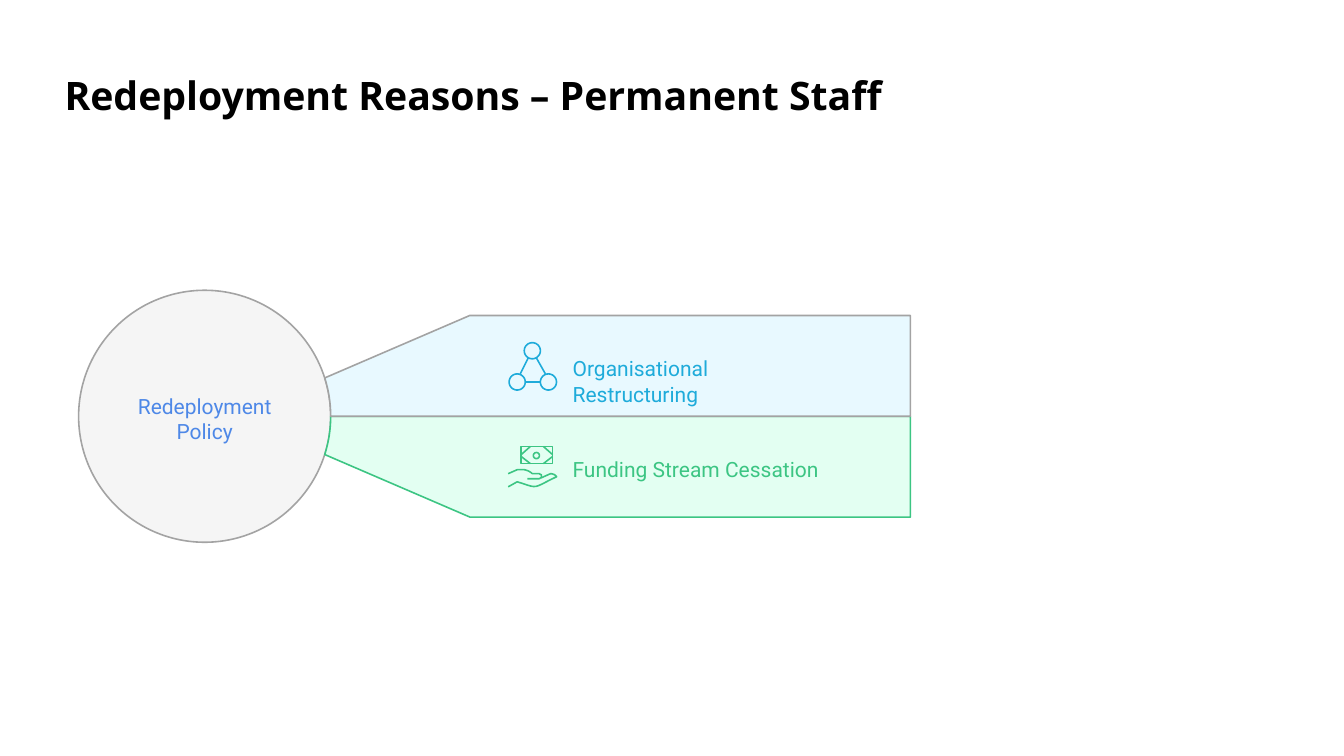
from math import asin, cos, pi, sin

from pptx import Presentation
from pptx.dml.color import RGBColor
from pptx.enum.shapes import MSO_SHAPE
from pptx.enum.text import MSO_ANCHOR, MSO_AUTO_SIZE, PP_ALIGN
from pptx.util import Inches, Pt

BLACK = RGBColor(0x00, 0x00, 0x00)
GRAY = RGBColor(0xA3, 0xA3, 0xA3)
PALE_GRAY = RGBColor(0xF5, 0xF5, 0xF5)
BLUE = RGBColor(0x4E, 0x88, 0xE7)
CYAN = RGBColor(0x1E, 0xAB, 0xDA)
PALE_CYAN = RGBColor(0xE8, 0xF9, 0xFF)
GREEN = RGBColor(0x3C, 0xC5, 0x83)
PALE_GREEN = RGBColor(0xE3, 0xFF, 0xF2)

LINE_WIDTH = Pt(1.12)
HUB_X, HUB_Y, HUB_RADIUS = 2.03, 4.13, 1.25
BAND_BEND, BAND_RIGHT, BAND_HEIGHT = 4.66, 9.03, 1.0
NECK_HEIGHT = 0.38  # height of a band where it meets the hub
LABEL_LEFT = 5.68


def write_text(frame, text, *, size, font, color, bold=False,
               align=PP_ALIGN.LEFT, spacing=None):
    paragraph = frame.paragraphs[0]
    paragraph.text = text
    paragraph.alignment = align
    if spacing:
        paragraph.line_spacing = spacing
    for run in paragraph.runs:
        run.font.size = Pt(size)
        run.font.name = font
        run.font.bold = bold
        run.font.color.rgb = color


def add_label(slide, text, left, top, width, height, color, **text_format):
    frame = slide.shapes.add_textbox(
        Inches(left), Inches(top), Inches(width), Inches(height)).text_frame
    frame.margin_left = frame.margin_right = 0
    frame.margin_top = frame.margin_bottom = 0
    frame.word_wrap = False
    frame.auto_size = MSO_AUTO_SIZE.SHAPE_TO_FIT_TEXT
    write_text(frame, text, size=15, font="Roboto", color=color, **text_format)


def paint(shape, line, fill=None):
    shape.shadow.inherit = False
    shape.line.color.rgb = line
    shape.line.width = LINE_WIDTH
    if fill is None:
        shape.fill.background()
    else:
        shape.fill.solid()
        shape.fill.fore_color.rgb = fill


def add_outline(slide, contours, line, fill=None):
    """Draw one freeform; a contour that returns to its start is closed."""
    builder = None
    for contour in contours:
        start, *rest = [(Inches(x), Inches(y)) for x, y in contour]
        if builder is None:
            builder = slide.shapes.build_freeform(*start)
        else:
            builder.move_to(*start)
        builder.add_line_segments(rest, close=contour[0] == contour[-1])
    paint(builder.convert_to_shape(), line, fill)


def arc(x, y, radius, sweep, steps):
    """Return points along an arc that starts at the right of its centre."""
    angles = [sweep * step / steps for step in range(steps + 1)]
    return [(x + radius * cos(angle), y + radius * sin(angle)) for angle in angles]


def ring(x, y, radius):
    points = arc(x, y, radius, 2 * pi, 36)
    return points[:-1] + points[:1]


def bezier(p0, p1, p2, p3, steps=10):
    """Return points along a cubic curve."""
    points = []
    for step in range(steps + 1):
        t = step / steps
        weights = ((1 - t) ** 3, 3 * t * (1 - t) ** 2, 3 * t * t * (1 - t), t ** 3)
        points.append(tuple(
            sum(w * p[axis] for w, p in zip(weights, (p0, p1, p2, p3)))
            for axis in (0, 1)))
    return points


def add_band(slide, direction, line, fill):
    """Direction is -1 for the band above the centre line and 1 below it."""
    sweep = direction * asin(NECK_HEIGHT / HUB_RADIUS)
    far_y = HUB_Y + direction * BAND_HEIGHT
    corner = (BAND_RIGHT, HUB_Y)
    band = [corner, *arc(HUB_X, HUB_Y, HUB_RADIUS, sweep, 8),
            (BAND_BEND, far_y), (BAND_RIGHT, far_y), corner]
    add_outline(slide, [band], line, fill)


def add_network_icon(slide, color):
    nodes = [ring(x, y, 0.08)
             for x, y in ((5.13, 3.79), (5.44, 3.79), (5.28, 3.48))]
    links = [[(5.21, 3.79), (5.36, 3.79)],
             [(5.32, 3.55), (5.41, 3.71)],
             [(5.24, 3.55), (5.16, 3.71)]]
    add_outline(slide, nodes + links, color)


def add_funding_icon(slide, color):
    # Open hand
    palm = [(5.37, 4.74),
            *bezier((5.46, 4.7), (5.48, 4.7), (5.51, 4.71), (5.52, 4.73)),
            *bezier((5.52, 4.73), (5.27, 4.85), (5.35, 4.85), (5.13, 4.78)),
            (5.04, 4.83)]
    fingers = [(5.23, 4.75),
               *bezier((5.35, 4.75), (5.35, 4.75), (5.36, 4.74), (5.37, 4.74)),
               *bezier((5.37, 4.74), (5.37, 4.73), (5.37, 4.72), (5.37, 4.71)),
               *bezier((5.37, 4.71), (5.36, 4.71), (5.35, 4.7), (5.35, 4.7)),
               *bezier((5.28, 4.7), (5.26, 4.68), (5.22, 4.66), (5.19, 4.66)),
               (5.13, 4.66), (5.04, 4.7)]

    # Banknote with cut corners and a coin
    left, top, right, bottom = 5.17, 4.43, 5.48, 4.6
    note = [(left, top), (right, top), (right, bottom), (left, bottom), (left, top)]
    cuts = [[(inner_x, y), (x, inner_y)]
            for x, inner_x in ((left, left + 0.09), (right, right - 0.09))
            for y, inner_y in ((top, top + 0.08), (bottom, bottom - 0.07))]
    coin = ring(5.32, 4.52, 0.03)
    add_outline(slide, [palm, fingers, note, *cuts, coin], color)


def main():
    presentation = Presentation()
    presentation.slide_width = Inches(13.33)
    presentation.slide_height = Inches(7.5)
    slide = presentation.slides.add_slide(presentation.slide_layouts[5])

    # Title
    title = slide.shapes.title
    title.left, title.top = Inches(0.54), Inches(0.24)
    title.width, title.height = Inches(11.5), Inches(1.45)
    title.text_frame.vertical_anchor = MSO_ANCHOR.MIDDLE
    title.text_frame.word_wrap = True
    write_text(title.text_frame, "Redeployment Reasons – Permanent Staff",
               size=28, font="Open Sans", color=BLACK, bold=True, spacing=0.9)

    # Policy hub and the two reasons
    hub = slide.shapes.add_shape(
        MSO_SHAPE.OVAL, Inches(HUB_X - HUB_RADIUS), Inches(HUB_Y - HUB_RADIUS),
        Inches(2 * HUB_RADIUS), Inches(2 * HUB_RADIUS))
    paint(hub, GRAY, PALE_GRAY)
    add_band(slide, 1, GREEN, PALE_GREEN)
    add_band(slide, -1, GRAY, PALE_CYAN)

    # Labels
    add_label(slide, "Organisational Restructuring", LABEL_LEFT, 3.53, 2.64, 0.31, CYAN)
    add_label(slide, "Redeployment\vPolicy", 1.34, 3.9, 1.38, 0.61, BLUE,
              align=PP_ALIGN.CENTER)
    add_label(slide, "Funding Stream Cessation", LABEL_LEFT, 4.53, 2.44, 0.31, GREEN)

    # Icons
    add_network_icon(slide, CYAN)
    add_funding_icon(slide, GREEN)

    presentation.save("out.pptx")


if __name__ == "__main__":
    main()
